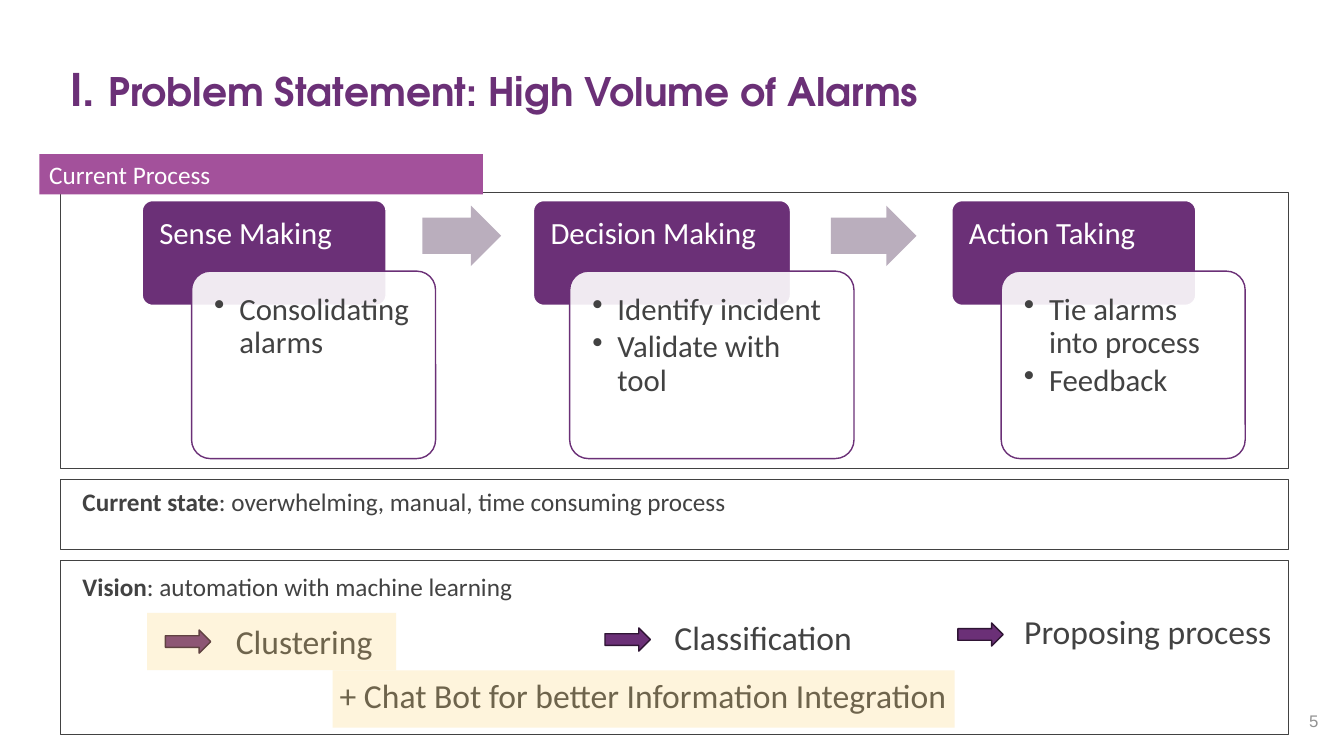
from lxml.etree import SubElement
from pptx import Presentation
from pptx.dml.color import RGBColor
from pptx.enum.shapes import MSO_SHAPE
from pptx.enum.text import MSO_ANCHOR, PP_ALIGN
from pptx.oxml.ns import qn
from pptx.util import Pt

PX = 9144
COLORS = {
    "purple": "6B3077", "outline": "2F1534", "banner": "A3519B",
    "flow": "BAAEBD", "highlight": "FDD26E", "text": "424242",
    "number": "939393", "white": "FFFFFF",
}
BODY = {"size": 18, "name": "Calibri", "color": "text"}
LABEL = {**BODY, "size": 24}
CARD = {**BODY, "size": 22}
HEADING = {"size": 28, "name": "TeX Gyre Adventor", "color": "purple", "bold": True}


def emu(*lengths):
    return [n * PX for n in lengths]


def rgb(name):
    return RGBColor.from_string(COLORS[name])


def set_font(font, fmt):
    for key, value in fmt.items():
        if key == "color":
            font.color.rgb = rgb(value)
        else:
            setattr(font, key, Pt(value) if key == "size" else value)


def set_frame(tf, insets=(10, 5, 10, 5), anchor=MSO_ANCHOR.TOP):
    tf.word_wrap = True
    tf.vertical_anchor = anchor
    sides = ("margin_left", "margin_top", "margin_right", "margin_bottom")
    for side, value in zip(sides, emu(*insets)):
        setattr(tf, side, value)


def add_runs(p, runs, align=PP_ALIGN.LEFT, **spacing):
    p.alignment = align
    for key, value in spacing.items():
        setattr(p, key, value)
    for text, fmt in runs:
        r = p.add_run()
        r.text = text
        set_font(r.font, fmt)


def add_text(s, box, runs, anchor=MSO_ANCHOR.TOP, **layout):
    tf = s.shapes.add_textbox(*emu(*box)).text_frame
    set_frame(tf, anchor=anchor)
    add_runs(tf.paragraphs[0], runs, **layout)


def add_box(s, kind, box, fill=None, line=None, opacity=None, adj=()):
    sp = s.shapes.add_shape(kind, *emu(*box))
    sp.shadow.inherit = False
    for i, value in enumerate(adj):
        sp.adjustments[i] = value
    if fill:
        sp.fill.solid()
        sp.fill.fore_color.rgb = rgb(fill)
        if opacity:
            clr = sp.fill._xPr.find(qn("a:solidFill"))[0]
            SubElement(clr, qn("a:alpha"), val=str(opacity * 1000))
    else:
        sp.fill.background()
    if line:
        sp.line.color.rgb = rgb(line)
        sp.line.width = Pt(1)
    else:
        sp.line.fill.background()
    return sp


def add_bullet(p):
    pPr = p._p.get_or_add_pPr()
    indent = 25 * PX
    pPr.set("marL", str(indent))
    pPr.set("indent", str(-indent))
    SubElement(pPr, qn("a:buChar"), char="•")


def add_card(s, x, width, body_x, body_width, heading, points):
    sp = add_box(s, MSO_SHAPE.ROUNDED_RECTANGLE, (x, 199, width, 104),
                 "purple", "white", adj=[0.1])
    set_frame(sp.text_frame, (14, 14, 14, 9))
    add_runs(sp.text_frame.paragraphs[0], [(heading, {**CARD, "color": "white"})],
             line_spacing=0.9)

    sp = add_box(s, MSO_SHAPE.ROUNDED_RECTANGLE, (body_x, 269, body_width, 186),
                 "white", "purple", opacity=90, adj=[0.1])
    tf = sp.text_frame
    set_frame(tf, (17, 17, 17, 17))
    for i, point in enumerate(points):
        p = tf.add_paragraph() if i else tf.paragraphs[0]
        add_bullet(p)
        add_runs(p, [(point, CARD)], line_spacing=0.9, space_after=Pt(3))


def add_goal(s, x, y, text_x, text_y, width, text):
    add_text(s, (text_x, text_y, width, 50), [(text, LABEL)])
    add_box(s, MSO_SHAPE.RIGHT_ARROW, (x, y, 45, 23), "purple", "outline")


def add_statement(s, y, width, label, text):
    add_text(s, (72, y, width, 71), [(label, {**BODY, "bold": True}), (text, BODY)])


def main():
    prs = Presentation()
    prs.slide_width, prs.slide_height = emu(1333, 750)
    s = prs.slides.add_slide(prs.slide_layouts[6])

    add_text(s, (60, 62, 1081, 133),
             [("I. ", {**HEADING, "size": 32}),
              ("Problem Statement: High Volume of Alarms", HEADING)],
             line_spacing=0.9)
    add_text(s, (1273, 695, 60, 40),
             [("5", {"size": 12, "name": "Arial", "color": "number"})],
             anchor=MSO_ANCHOR.MIDDLE, align=PP_ALIGN.CENTER)

    for card in (
        (141, 242, 190, 242, "Sense Making", ["Consolidating alarms"]),
        (529, 255, 565, 282, "Decision Making",
         ["Identify incident", "Validate with tool"]),
        (944, 242, 993, 242, "Action Taking",
         ["Tie alarms into process", "Feedback"]),
    ):
        add_card(s, *card)
    for x, width in ((419, 78), (824, 85)):
        add_box(s, MSO_SHAPE.RIGHT_ARROW, (x, 204, width, 60), "flow", adj=[0.6, 0.5])

    add_statement(s, 562, 1074, "Vision", ": automation with machine learning")
    for goal in (
        (164, 625, 224, 611, 232, "Clustering"),
        (600, 623, 659, 607, 276, "Classification"),
        (950, 618, 1006, 601, 320, "Proposing process"),
    ):
        add_goal(s, *goal)
    add_text(s, (327, 665, 855, 50),
             [("+ Chat Bot for better Information Integration", LABEL)])

    for y, height in ((191, 274), (476, 69), (556, 173)):
        add_box(s, MSO_SHAPE.RECTANGLE, (60, y, 1218, height), line="text")
    add_statement(s, 478, 660, "Current state",
                  ": overwhelming, manual, time consuming process")

    sp = add_box(s, MSO_SHAPE.RECTANGLE, (39, 153, 440, 40), "banner")
    set_frame(sp.text_frame)
    add_runs(sp.text_frame.paragraphs[0],
             [("Current Process", {**BODY, "color": "white"})])

    for box in ((146, 608, 247, 57), (330, 665, 617, 57)):
        add_box(s, MSO_SHAPE.RECTANGLE, box, "highlight", opacity=24)

    prs.save("out.pptx")


if __name__ == "__main__":
    main()
